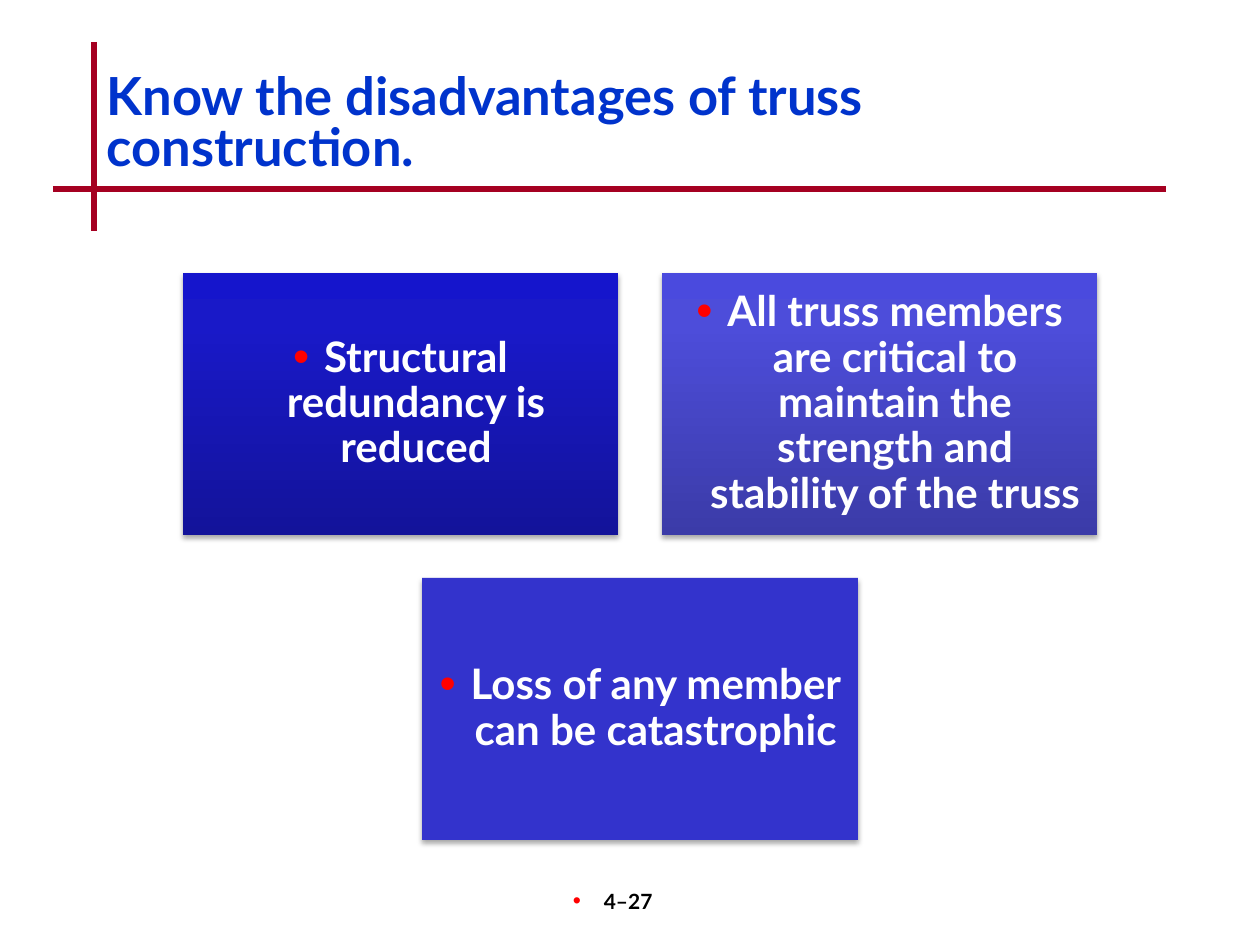
import pptx
import pptx.util
import pptx.dml.color
import pptx.enum.shapes
import pptx.enum.text
import pptx.oxml
import pptx.oxml.ns
from lxml import etree

TITLE = "Know the disadvantages of truss construction."
PAGE_NUMBER = "4–27"
FONT = "Lato"
COLORS = {"title": "0033CC", "rule": "A50021", "bullet": "FF0000", "card": "3333CC",
          "card text": "FFFFFF", "page number": "000000", "shadow": "000000"}

# Each row is centred; gradient stops run from bottom to top, None is a plain fill
ROWS = [
    [("Structural redundancy is reduced",
      [(0, "13139A"), (80, "1919C8"), (100, "1515CC")]),
     ("All truss members are critical to maintain the strength and stability of the truss",
      [(0, "3B3BA8"), (80, "4D4DDA"), (100, "4A4ADE")])],
    [("Loss of any member can be catastrophic", None)],
]
RULES = [(94, 42, 94, 231), (53, 189, 1166, 189)]
CARD_WIDTH, CARD_HEIGHT, GAP = 436, 262, 43
GRID_CENTER, GRID_TOP = 640, 273
HANG = 31


def px(value):
    return pptx.util.Emu(round(value * 914400 / 126))


def color(name):
    return pptx.dml.color.RGBColor.from_string(COLORS[name])


def add_xml(parent, body):
    """Append one drawing element written with the a: prefix."""
    tag, rest = body[1:].split(" ", 1)
    parent.append(pptx.oxml.parse_xml(
        f'<{tag} {pptx.oxml.ns.nsdecls("a")} {rest}'))


def set_font(paragraph, size, color_name):
    font = paragraph.font
    font.name, font.size, font.bold = FONT, pptx.util.Pt(size), True
    font.color.rgb = color(color_name)


def add_bullet(paragraph, percent):
    properties = paragraph._p.get_or_add_pPr()
    properties.set("marL", str(px(HANG)))
    properties.set("indent", str(-px(HANG)))
    add_xml(properties, f'<a:buClr ><a:srgbClr val="{COLORS["bullet"]}"/></a:buClr>')
    add_xml(properties, f'<a:buSzPct val="{percent * 1000}"/>')
    add_xml(properties, '<a:buFont typeface="Arial"/>')
    add_xml(properties, '<a:buChar char="•"/>')


def add_rule(slide, ends):
    rule = slide.shapes.add_connector(
        pptx.enum.shapes.MSO_CONNECTOR.STRAIGHT, *map(px, ends))
    rule.line.color.rgb = color("rule")
    rule.line.width = pptx.util.Pt(3)
    etree.SubElement(rule._element.spPr, pptx.oxml.ns.qn("a:effectLst"))


def fill_gradient(shape, stops):
    shape.fill.gradient()
    shape.fill.gradient_angle = 90
    stop_list = shape._element.spPr.find(".//" + pptx.oxml.ns.qn("a:gsLst"))
    for stop in list(stop_list):
        stop_list.remove(stop)
    for position, value in stops:
        add_xml(stop_list, f'<a:gs pos="{position * 1000}"><a:srgbClr val="{value}"/></a:gs>')


def add_card(slide, left, top, text, stops):
    card = slide.shapes.add_shape(
        pptx.enum.shapes.MSO_SHAPE.RECTANGLE,
        px(left), px(top), px(CARD_WIDTH), px(CARD_HEIGHT))
    if stops:
        fill_gradient(card, stops)
    else:
        card.fill.solid()
        card.fill.fore_color.rgb = color("card")
    card.line.fill.background()
    card.shadow.inherit = False
    effects = card._element.spPr.find(pptx.oxml.ns.qn("a:effectLst"))
    add_xml(effects, '<a:outerShdw blurRad="39370" dist="22860" dir="5400000" rotWithShape="0">'
            f'<a:srgbClr val="{COLORS["shadow"]}"><a:alpha val="35000"/></a:srgbClr>'
            '</a:outerShdw>')

    frame = card.text_frame
    frame.word_wrap = True
    frame.vertical_anchor = pptx.enum.text.MSO_ANCHOR.MIDDLE
    frame.margin_left = frame.margin_right = pptx.util.Inches(0.1)
    frame.margin_top = frame.margin_bottom = pptx.util.Inches(0.1)
    paragraph = frame.paragraphs[0]
    paragraph.text = text
    paragraph.alignment = pptx.enum.text.PP_ALIGN.CENTER
    paragraph.line_spacing = 0.9
    paragraph.space_after = pptx.util.Pt(8)
    add_bullet(paragraph, 110)
    set_font(paragraph, 24, "card text")


def add_title(slide):
    title = slide.shapes.title
    title.left, title.top, title.width, title.height = map(px, (94, 69, 1092, 116))
    frame = title.text_frame
    frame.text = TITLE
    frame.word_wrap = True
    frame.auto_size = pptx.enum.text.MSO_AUTO_SIZE.NONE
    frame.vertical_anchor = pptx.enum.text.MSO_ANCHOR.TOP
    paragraph = frame.paragraphs[0]
    paragraph.alignment = pptx.enum.text.PP_ALIGN.LEFT
    paragraph.line_spacing = 0.8
    set_font(paragraph, 30, "title")


def add_page_number(slide):
    box = slide.shapes.add_textbox(*map(px, (494, 882, 262, 63)))
    frame = box.text_frame
    frame.word_wrap = True
    frame.margin_right = px(37)
    paragraph = frame.paragraphs[0]
    paragraph.text = PAGE_NUMBER
    paragraph.alignment = pptx.enum.text.PP_ALIGN.CENTER
    add_bullet(paragraph, 110)
    set_font(paragraph, 12, "page number")


def main():
    presentation = pptx.Presentation()
    presentation.slide_width = pptx.util.Inches(10)
    presentation.slide_height = pptx.util.Inches(7.5)
    slide = presentation.slides.add_slide(presentation.slide_layouts.get_by_name("Title Only"))
    for ends in RULES:
        add_rule(slide, ends)
    add_title(slide)
    for row, cards in enumerate(ROWS):
        row_width = len(cards) * (CARD_WIDTH + GAP) - GAP
        top = GRID_TOP + row * (CARD_HEIGHT + GAP)
        for column, (text, stops) in enumerate(cards):
            left = GRID_CENTER - row_width / 2 + column * (CARD_WIDTH + GAP)
            add_card(slide, left, top, text, stops)
    add_page_number(slide)
    presentation.save("out.pptx")


if __name__ == "__main__":
    main()
